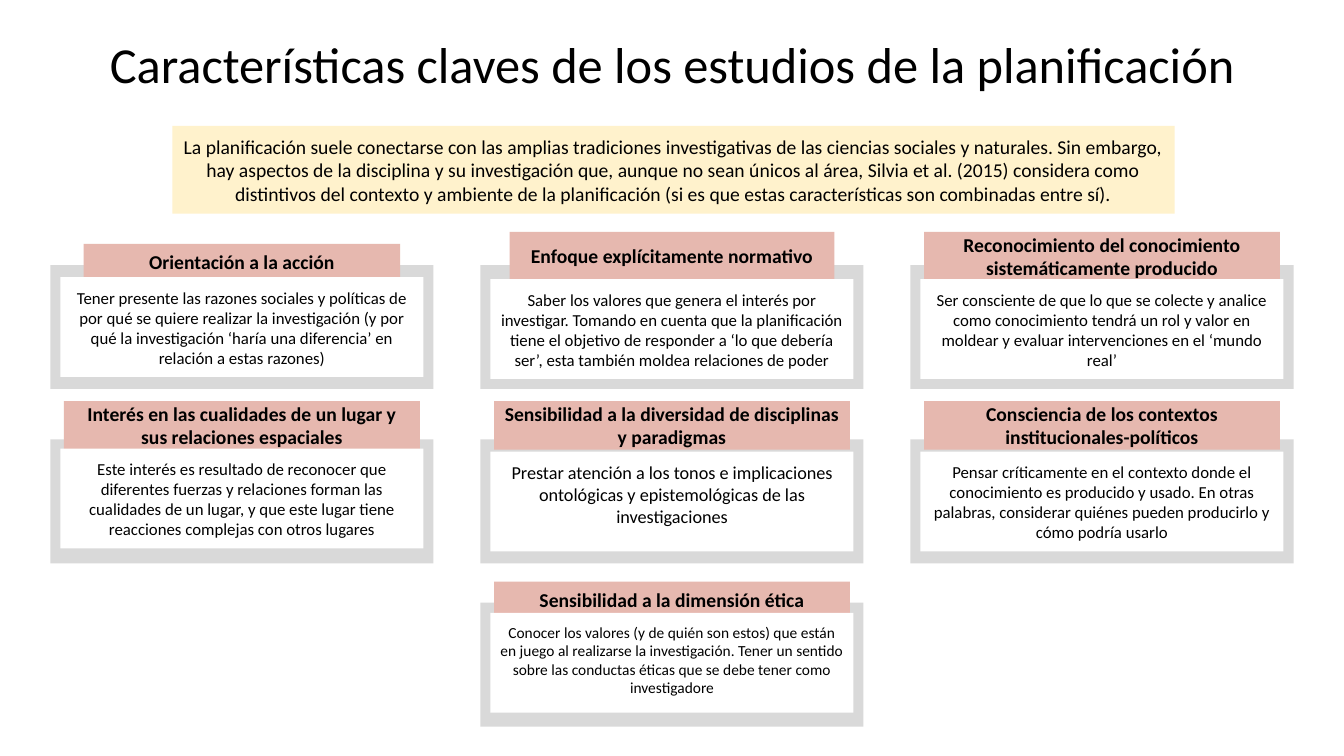
"""Build the slide on the key characteristics of planning studies."""
from dataclasses import dataclass

from pptx import Presentation
from pptx.dml.color import RGBColor
from pptx.enum.shapes import MSO_SHAPE
from pptx.enum.text import MSO_ANCHOR, PP_ALIGN
from pptx.shapes.autoshape import Shape
from pptx.slide import Slide
from pptx.util import Inches, Pt

RECTANGLE = MSO_SHAPE.RECTANGLE
TOP, MIDDLE = MSO_ANCHOR.TOP, MSO_ANCHOR.MIDDLE
CENTER = PP_ALIGN.CENTER

BLACK = RGBColor(0x00, 0x00, 0x00)
WHITE = RGBColor(0xFF, 0xFF, 0xFF)
GRAY = RGBColor(0xD9, 0xD9, 0xD9)
CREAM = RGBColor(0xFF, 0xF2, 0xCC)
ROSE = RGBColor(0xE6, 0xB8, 0xAF)

FONT = "Calibri"
FIRST_LEFT, COLUMN_STEP = 0.5, 4.265
FRAME_WIDTH, FRAME_HEIGHT = 3.8, 1.23
BODY_WIDTH, BODY_HEIGHT = 3.6, 0.99
FRAME_TOPS = (2.63, 4.36, 5.98)
HEADING_BOTTOMS = (2.78, 4.46, 6.13)

TITLE = "Características claves de los estudios de la planificación"
INTRODUCTION = (
    "La planificación suele conectarse con las amplias tradiciones investigativas de las "
    "ciencias sociales y naturales. Sin embargo, hay aspectos de la disciplina y su "
    "investigación que, aunque no sean únicos al área, Silvia et al. (2015) considera como "
    "distintivos del contexto y ambiente de la planificación (si es que estas "
    "características son combinadas entre sí)."
)


@dataclass(frozen=True)
class Card:
    row: int
    column: int
    heading: str
    body: str
    body_top: float
    heading_width: float = 3.53
    heading_height: float = 0.48
    body_size: int = 12

    @property
    def left(self) -> float:
        return FIRST_LEFT + self.column * COLUMN_STEP


CARDS = (
    Card(0, 0, "Orientación a la acción",
         "Tener presente las razones sociales y políticas de por qué se quiere realizar la "
         "investigación (y por qué la investigación ‘haría una diferencia’ en relación a "
         "estas razones)",
         2.75, heading_width=3.14, heading_height=0.36),
    Card(0, 1, "Enfoque explícitamente normativo",
         "Saber los valores que genera el interés por investigar. Tomando en cuenta que la "
         "planificación tiene el objetivo de responder a ‘lo que debería ser’, esta también "
         "moldea relaciones de poder",
         2.77, heading_width=3.22),
    Card(0, 2, "Reconocimiento del conocimiento sistemáticamente producido",
         "Ser consciente de que lo que se colecte y analice como conocimiento tendrá un rol y "
         "valor en moldear y evaluar intervenciones en el ‘mundo real’",
         2.77),
    Card(1, 0, "Interés en las cualidades de un lugar y sus relaciones espaciales",
         "Este interés es resultado de reconocer que diferentes fuerzas y relaciones forman "
         "las cualidades de un lugar, y que este lugar tiene reacciones complejas con otros "
         "lugares",
         4.45),
    Card(1, 1, "Sensibilidad a la diversidad de disciplinas y paradigmas",
         "Prestar atención a los tonos e implicaciones ontológicas y epistemológicas de las "
         "investigaciones",
         4.48, body_size=13),
    Card(1, 2, "Consciencia de los contextos institucionales-políticos",
         "Pensar críticamente en el contexto donde el conocimiento es producido y usado. En "
         "otras palabras, considerar quiénes pueden producirlo y cómo podría usarlo",
         4.48),
    Card(2, 1, "Sensibilidad a la dimensión ética",
         "Conocer los valores (y de quién son estos) que están en juego al realizarse la "
         "investigación. Tener un sentido sobre las conductas éticas que se debe tener como "
         "investigadore",
         6.08, heading_height=0.36, body_size=11),
)


def write_text(box: Shape, text: str, *, size: int, bold: bool = False,
               anchor: MSO_ANCHOR = MIDDLE, margin: float = 0.1,
               line_spacing: float = 1.0) -> None:
    frame = box.text_frame
    frame.word_wrap = True
    frame.vertical_anchor = anchor
    frame.margin_left = frame.margin_right = Inches(0.1)
    frame.margin_top = frame.margin_bottom = Inches(margin)
    para = frame.paragraphs[0]
    para.alignment = CENTER
    para.line_spacing = line_spacing
    span = para.add_run()
    span.text = text
    span.font.name = FONT
    span.font.size = Pt(size)
    span.font.bold = bold
    span.font.color.rgb = BLACK


def add_box(page: Slide, left: float, top: float, width: float, height: float,
            color: RGBColor) -> Shape:
    box = page.shapes.add_shape(
        RECTANGLE, Inches(left), Inches(top), Inches(width), Inches(height))
    box.shadow.inherit = False
    box.fill.solid()
    box.fill.fore_color.rgb = color
    box.line.fill.background()
    return box


def add_frame(page: Slide, card: Card) -> None:
    add_box(page, card.left, FRAME_TOPS[card.row], FRAME_WIDTH, FRAME_HEIGHT, GRAY)


def add_heading(page: Slide, card: Card) -> None:
    left = card.left + (FRAME_WIDTH - card.heading_width) / 2
    top = HEADING_BOTTOMS[card.row] - card.heading_height
    box = add_box(page, left, top, card.heading_width, card.heading_height, ROSE)
    write_text(box, card.heading, size=14, bold=True)


def add_body(page: Slide, card: Card) -> None:
    left = card.left + (FRAME_WIDTH - BODY_WIDTH) / 2
    box = add_box(page, left, card.body_top, BODY_WIDTH, BODY_HEIGHT, WHITE)
    write_text(box, card.body, size=card.body_size, anchor=TOP)


def main() -> None:
    deck = Presentation()
    deck.slide_width, deck.slide_height = Inches(13.33), Inches(7.5)
    page = deck.slides.add_slide(deck.slide_layouts[6])

    title = page.shapes.add_textbox(Inches(0.92), Inches(0), Inches(11.5), Inches(1.33))
    write_text(title, TITLE, size=36, margin=0.05, line_spacing=0.9)
    introduction = add_box(page, 1.71, 1.25, 9.94, 0.87, CREAM)
    write_text(introduction, INTRODUCTION, size=14)

    for add_part in (add_frame, add_heading, add_body):
        for card in CARDS:
            add_part(page, card)

    deck.save("out.pptx")


if __name__ == "__main__":
    main()
